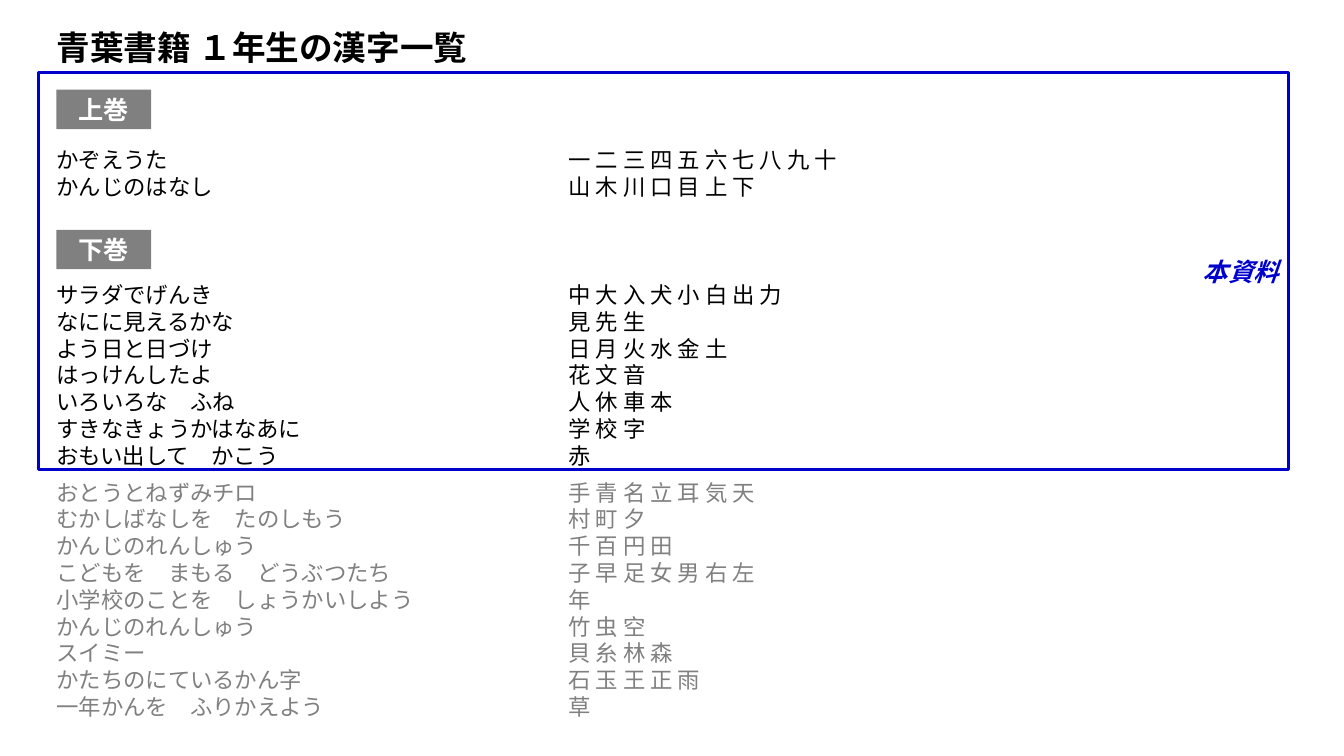
from pptx import Presentation
from pptx.dml.color import RGBColor
from pptx.enum.shapes import MSO_SHAPE
from pptx.enum.text import MSO_ANCHOR, MSO_AUTO_SIZE, PP_ALIGN
from pptx.oxml.ns import qn
from pptx.util import Inches, Pt
from lxml.etree import SubElement

FONT = "Noto Sans CJK JP"
COLORS = {"text": "000000", "gray": "808080", "white": "FFFFFF", "blue": "0000CC"}
TITLE = "青葉書籍 １年生の漢字一覧"
VOLUMES = [("上巻", 0.89), ("下巻", 2.28)]
FRAME_LABEL = "本資料"
LESSON_GROUPS = [
    (1.45, "text", [
        ("かぞえうた", "一 二 三 四 五 六 七 八 九 十"),
        ("かんじのはなし", "山 木 川 口 目 上 下"),
    ]),
    (2.79, "text", [
        ("サラダでげんき", "中 大 入 犬 小 白 出 力"),
        ("なにに見えるかな", "見 先 生"),
        ("よう日と日づけ", "日 月 火 水 金 土"),
        ("はっけんしたよ", "花 文 音"),
        ("いろいろな　ふね", "人 休 車 本"),
        ("すきなきょうかはなあに", "学 校 字"),
        ("おもい出して　かこう", "赤"),
    ]),
    (4.75, "gray", [
        ("おとうとねずみチロ", "手 青 名 立 耳 気 天"),
        ("むかしばなしを　たのしもう", "村 町 夕"),
        ("かんじのれんしゅう", "千 百 円 田"),
        ("こどもを　まもる　どうぶつたち", "子 早 足 女 男 右 左"),
        ("小学校のことを　しょうかいしよう", "年"),
        ("かんじのれんしゅう", "竹 虫 空"),
        ("スイミー", "貝 糸 林 森"),
        ("かたちのにているかん字", "石 玉 王 正 雨"),
        ("一年かんを　ふりかえよう", "草"),
    ]),
]
LEFT, WIDTH = 0.56, 9.36
KANJI_TAB = 5.08
LINE_PITCH = 19.15


def rgb(name):
    return RGBColor.from_string(COLORS[name])


def style(p, size, color, bold=False, italic=False, align=PP_ALIGN.LEFT):
    p.alignment = align
    for r in p.runs:
        r.font.name = FONT
        r.font.size = Pt(size)
        r.font.bold = bold
        r.font.italic = italic
        r.font.color.rgb = rgb(color)
        SubElement(r.font._element, qn("a:ea"), typeface=FONT)


def clear_insets(tf):
    tf.margin_left = tf.margin_right = tf.margin_top = tf.margin_bottom = 0


def add_rect(slide, box, text):
    sp = slide.shapes.add_shape(MSO_SHAPE.RECTANGLE, *map(Inches, box))
    sp.shadow.inherit = False
    sp.text_frame.text = text
    sp.text_frame.vertical_anchor = MSO_ANCHOR.MIDDLE
    return sp


def add_title(slide):
    title = slide.shapes.title
    title.left, title.top = Inches(LEFT), Inches(0.21)
    title.width, title.height = Inches(WIDTH), Inches(0.51)
    tf = title.text_frame
    tf.text = TITLE
    tf.auto_size = MSO_AUTO_SIZE.NONE
    tf.vertical_anchor = MSO_ANCHOR.MIDDLE
    clear_insets(tf)
    style(tf.paragraphs[0], 24, "text", bold=True)


def add_lessons(slide, top, color, lessons):
    height = len(lessons) * LINE_PITCH / 72
    sp = slide.shapes.add_textbox(*map(Inches, (LEFT, top, WIDTH, height)))
    tf = sp.text_frame
    tf.word_wrap = True
    clear_insets(tf)
    tf.text = "\n".join(f"{lesson}\t{kanji}" for lesson, kanji in lessons)
    for p in tf.paragraphs:
        style(p, 16, color)
        p.line_spacing = Pt(LINE_PITCH)
        tabs = SubElement(p._p.get_or_add_pPr(), qn("a:tabLst"))
        SubElement(tabs, qn("a:tab"), pos=str(Inches(KANJI_TAB)), algn="l")


def add_volume(slide, name, top):
    sp = add_rect(slide, (LEFT, top, 0.94, 0.39), name)
    sp.fill.solid()
    sp.fill.fore_color.rgb = rgb("gray")
    sp.line.fill.background()
    style(sp.text_frame.paragraphs[0], 18, "white", bold=True, align=PP_ALIGN.CENTER)


def add_frame(slide):
    sp = add_rect(slide, (0.38, 0.72, 12.4, 3.94), FRAME_LABEL)
    sp.fill.background()
    sp.line.color.rgb = rgb("blue")
    sp.line.width = Pt(2)
    style(sp.text_frame.paragraphs[0], 18, "blue", bold=True, italic=True, align=PP_ALIGN.RIGHT)


def main():
    prs = Presentation()
    prs.slide_width, prs.slide_height = Inches(13.33), Inches(7.5)
    slide = prs.slides.add_slide(prs.slide_layouts[5])
    add_title(slide)
    for group in LESSON_GROUPS:
        add_lessons(slide, *group)
    for name, top in VOLUMES:
        add_volume(slide, name, top)
    add_frame(slide)
    prs.save("out.pptx")


if __name__ == "__main__":
    main()
